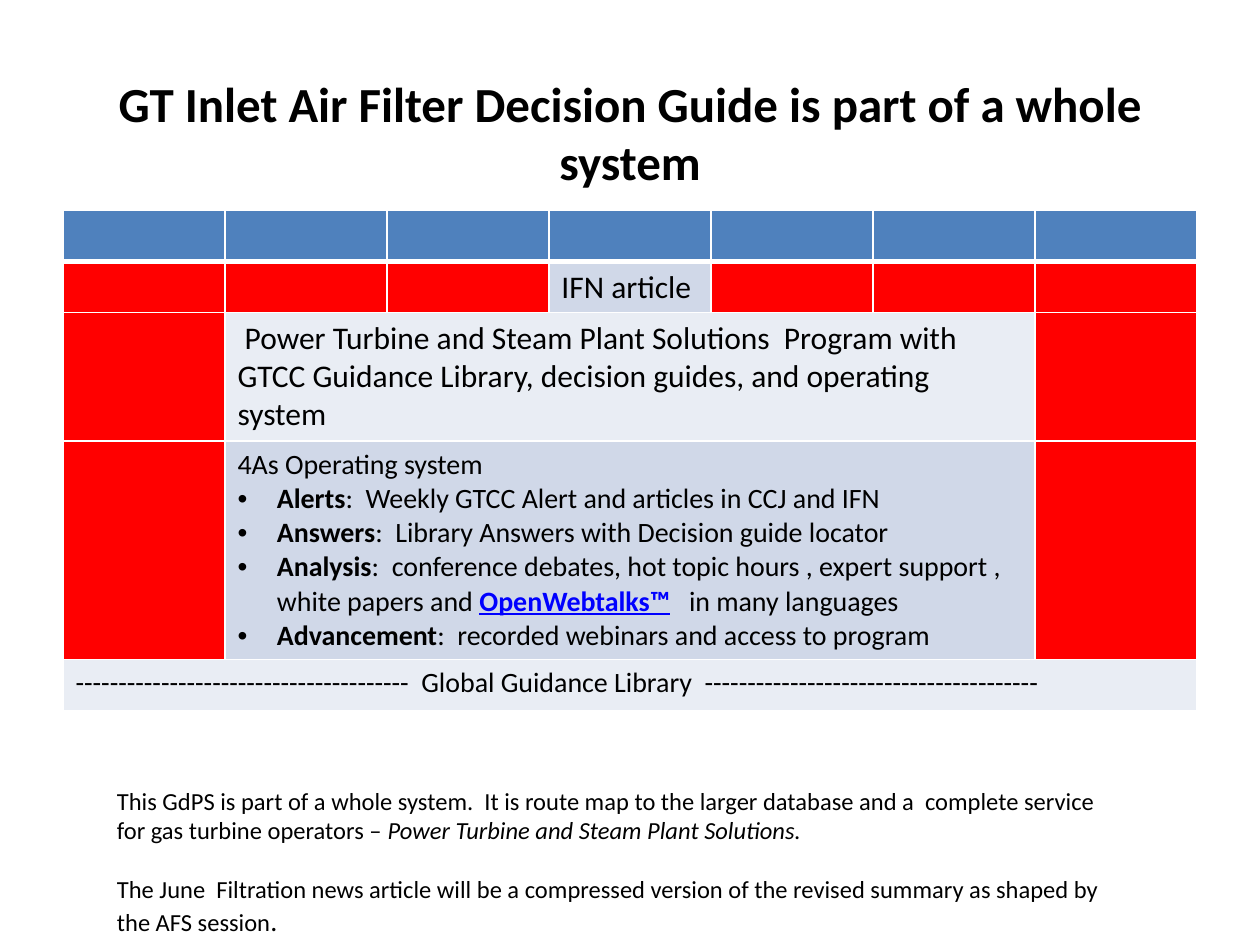
import pptx
import pptx.util
import pptx.dml.color
import pptx.enum.text
import pptx.oxml
import pptx.oxml.ns
from lxml import etree

Pt = pptx.util.Pt
RGB = pptx.dml.color.RGBColor
BLACK = RGB(0x00, 0x00, 0x00)
BLUE = RGB(0x4F, 0x81, 0xBD)
RED = RGB(0xFF, 0x00, 0x00)
DARK = RGB(0xD0, 0xD8, 0xE8)
LIGHT = RGB(0xE9, 0xED, 0xF4)
LINK = RGB(0x00, 0x00, 0xFF)
WHITE = RGB(0xFF, 0xFF, 0xFF)

deck = pptx.Presentation()
deck.slide_width = pptx.util.Inches(10)
deck.slide_height = pptx.util.Inches(7.5)
wide, high = deck.slide_width, deck.slide_height
slide = deck.slides.add_slide(deck.slide_layouts[6])
left, span = int(wide * 0.05), int(wide * 0.9)


def write(para, size, parts, bullet=False):
    if bullet:
        props = para._p.get_or_add_pPr()
        props.set("marL", str(Pt(22.5)))
        props.set("indent", str(-Pt(22.5)))
        for tag, key, value in (("buFont", "typeface", "Arial"), ("buChar", "char", "•")):
            etree.SubElement(props, pptx.oxml.ns.qn("a:" + tag)).set(key, value)
    para.font.size = Pt(size)
    para.font.name = "Calibri"
    para.font.color.rgb = BLACK
    for text, style in parts:
        run = para.add_run()
        run.text = text
        if "b" in style:
            run.font.bold = True
        if "i" in style:
            run.font.italic = True
        if "u" in style:
            run.font.underline = True
            run.font.color.rgb = LINK


def edge(cell, side, width):
    line = pptx.oxml.parse_xml(
        f'<a:{side} {pptx.oxml.ns.nsdecls("a")} w="{Pt(width)}"><a:solidFill>'
        f'<a:srgbClr val="{WHITE}"/></a:solidFill></a:{side}>')
    cell._tc.get_or_add_tcPr().append(line)


title = slide.shapes.add_textbox(left, int(high * 0.056), span, int(high * 0.167)).text_frame
title.word_wrap = True
title.vertical_anchor = pptx.enum.text.MSO_ANCHOR.MIDDLE
head = title.paragraphs[0]
head.alignment = pptx.enum.text.PP_ALIGN.CENTER
write(head, 28, [("GT Inlet Air Filter Decision Guide is part of a whole system", "b")])

rows = [0.054, 0.054, 0.136, 0.231, 0.054]
table = slide.shapes.add_table(
    5, 7, left, int(high * 0.223), span, int(high * sum(rows))).table
for col in table.columns:
    col.width = span // 7
for row, share in zip(table.rows, rows):
    row.height = int(high * share)

fills = [
    [BLUE] * 7,
    [RED] * 3 + [DARK] + [RED] * 3,
    [RED] + [LIGHT] * 5 + [RED],
    [RED] + [DARK] * 5 + [RED],
    [LIGHT] * 7,
]
for r, line in enumerate(fills):
    for c, shade in enumerate(line):
        cell = table.cell(r, c)
        for side in ("lnL", "lnR", "lnT", "lnB"):
            thick = (r, side) in ((0, "lnB"), (1, "lnT"))
            edge(cell, side, 3 if thick else 1)
        cell.fill.solid()
        cell.fill.fore_color.rgb = shade

for r, first, last in ((2, 1, 5), (3, 1, 5), (4, 0, 6)):
    table.cell(r, first).merge(table.cell(r, last))

plan = "Power Turbine and Steam Plant Solutions"
dash = "-" * 39
texts = [
    (1, 3, 18, "IFN article"),
    (2, 1, 18, f" {plan}  Program with GTCC Guidance Library, "
               "decision guides, and operating system"),
    (3, 1, 16, "4As Operating system"),
    (4, 0, 16, f"{dash}  Global Guidance Library  {dash}"),
]
for r, c, size, text in texts:
    write(table.cell(r, c).text_frame.paragraphs[0], size, [(text, "")])

points = [
    [("Alerts", "b"), (":  Weekly GTCC Alert and articles in CCJ and IFN", "")],
    [("Answers", "b"), (":  Library Answers with Decision guide locator", "")],
    [("Analysis", "b"),
     (":  conference debates, hot topic hours , expert support , white papers and ", ""),
     ("OpenWebtalks™", "bu"), ("   in many languages", "")],
    [("Advancement", "b"), (":  recorded webinars and access to program", "")],
]
frame = table.cell(3, 1).text_frame
for parts in points:
    write(frame.add_paragraph(), 16, parts, bullet=True)

note = slide.shapes.add_textbox(
    int(wide * 0.083), int(high * 0.825), int(wide * 0.817), int(high * 0.175)).text_frame
note.word_wrap = True
write(note.paragraphs[0], 14, [
    ("This GdPS is part of a whole system.  It is route map to the larger database and a  "
     "complete service for gas turbine operators – ", ""),
    (f"{plan}.", "i")])
last = note.add_paragraph()
last.space_before = Pt(17)
write(last, 14, [
    ("The June  Filtration news article will be a compressed version of the revised "
     "summary as shaped by the AFS session", ""), (".", "")])
last.runs[1].font.size = Pt(16)

deck.save("out.pptx")
